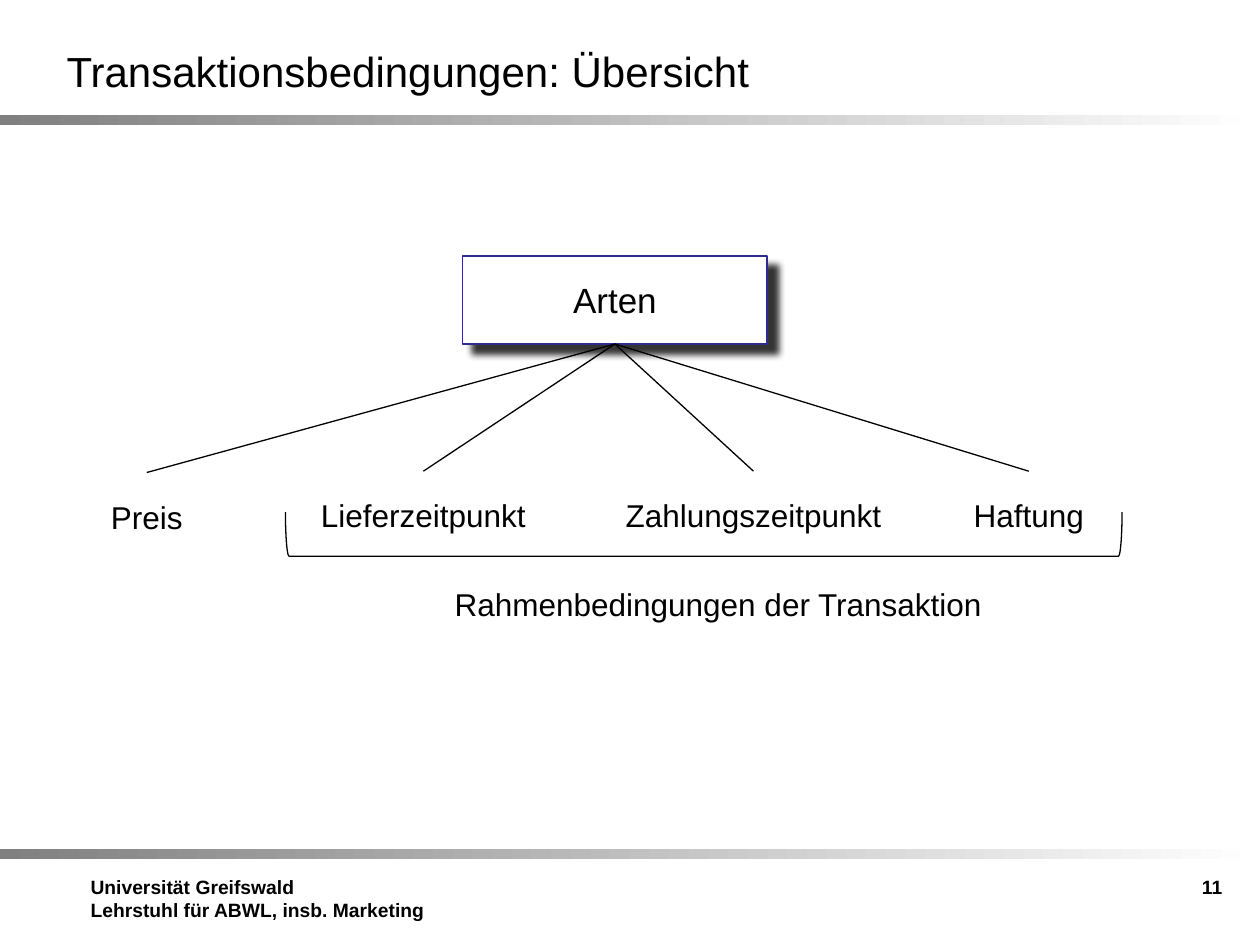
from lxml.etree import SubElement
from pptx import Presentation
from pptx.dml.color import RGBColor
from pptx.enum.shapes import MSO_CONNECTOR as Line, MSO_SHAPE as Shape
from pptx.enum.text import MSO_ANCHOR as Anchor, PP_ALIGN as Align
from pptx.oxml import parse_xml
from pptx.oxml.ns import nsdecls, qn
from pptx.util import Inches, Pt

WIDTH, HEIGHT = 10, 7.5
BLACK, WHITE, GREY, NAVY = "000000", "FFFFFF", "808080", "2D2D8A"
TITLE = "Transaktionsbedingungen: Übersicht"
FOOTER = "Universität Greifswald\nLehrstuhl für ABWL, insb. Marketing"
PAGE_NUMBER = "11"
ROOT = "Arten"
BRANCHES = [
    ("Preis", 0.62, 3.75, 1.09, 0.5),
    ("Lieferzeitpunkt", 2.19, 3.74, 2.34, 0.56),
    ("Zahlungszeitpunkt", 4.77, 3.74, 2.42, 0.56),
    ("Haftung", 7.11, 3.74, 2.11, 0.56),
]
GROUP = ("Rahmenbedingungen der Transaktion", 3.2, 4.44, 5, 0.56)
BAND_TOPS = (0.91, 6.74)
SHADOW = (
    f'<a:effectLst {nsdecls("a")}><a:outerShdw blurRad="{Pt(4)}" dist="{Pt(8)}" '
    f'dir="2700000" algn="tl" rotWithShape="0"><a:srgbClr val="{BLACK}">'
    '<a:alpha val="80000"/></a:srgbClr></a:outerShdw></a:effectLst>'
)


def color(value):
    return RGBColor.from_string(value)


def write(box, text, size, align=Align.LEFT, anchor=Anchor.TOP, bold=False, spacing=None):
    frame = box.text_frame
    frame.word_wrap = True
    frame.vertical_anchor = anchor
    frame.text = text
    for para in frame.paragraphs:
        para.alignment = align
        para.line_spacing = spacing
        for span in para.runs:
            font = span.font
            font.name, font.size, font.bold = "Arial", Pt(size), bold
            font.color.rgb = color(BLACK)


def add_text(page, text, left, top, width, height, size, **style):
    box = page.shapes.add_textbox(*map(Inches, (left, top, width, height)))
    write(box, text, size, **style)
    return box


def add_shape(page, kind, left, top, width, height):
    shape = page.shapes.add_shape(kind, *map(Inches, (left, top, width, height)))
    shape.shadow.inherit = False
    return shape


def set_line(shape, value, width):
    shape.line.color.rgb = color(value)
    shape.line.width = Pt(width)


def add_band(page, top):
    band = add_shape(page, Shape.RECTANGLE, 0, top, WIDTH, 0.08)
    band.line.fill.background()
    band.fill.gradient()
    band.fill.gradient_angle = 0
    for stop, position, value in zip(band.fill.gradient_stops, (0, 1), (GREY, WHITE)):
        stop.position = position
        stop.color.rgb = color(value)


def add_root(page):
    root = add_shape(page, Shape.RECTANGLE, 3.67, 2.03, 2.42, 0.7)
    root.fill.solid()
    root.fill.fore_color.rgb = color(WHITE)
    set_line(root, NAVY, 1)
    properties = root._element.spPr
    properties.replace(properties.find(qn("a:effectLst")), parse_xml(SHADOW))
    write(root, ROOT, 20, align=Align.CENTER, anchor=Anchor.MIDDLE)
    return root


def add_bracket(page):
    bracket = add_shape(page, Shape.RIGHT_BRACKET, 5.41, 0.92, 0.35, 6.64)
    bracket.rotation = 90
    bracket.fill.background()
    set_line(bracket, BLACK, 0.75)


def join(page, parent, child):
    link = page.shapes.add_connector(Line.STRAIGHT, 0, 0, 0, 0)
    link.begin_connect(parent, 2)
    link.end_connect(child, 0)
    set_line(link, BLACK, 0.75)
    SubElement(link._element.spPr, qn("a:effectLst"))


def main():
    """Build the overview slide of transaction conditions."""
    deck = Presentation()
    deck.slide_width, deck.slide_height = Inches(WIDTH), Inches(HEIGHT)
    page = deck.slides.add_slide(deck.slide_layouts[6])
    for top in BAND_TOPS:
        add_band(page, top)
    add_text(page, FOOTER, 0.62, 6.9, 2.91, 0.59, 11, bold=True)
    add_text(page, TITLE, 0.43, 0.25, 9, 0.63, 24, anchor=Anchor.MIDDLE)
    root = add_root(page)
    label = dict(size=18, align=Align.CENTER, spacing=1.5)
    children = [add_text(page, *branch, **label) for branch in BRANCHES]
    add_bracket(page)
    add_text(page, *GROUP, **label)
    for child in children:
        join(page, root, child)
    add_text(page, PAGE_NUMBER, 7.47, 6.9, 2.33, 0.57, 11, align=Align.RIGHT, bold=True)
    deck.save("out.pptx")


if __name__ == "__main__":
    main()
